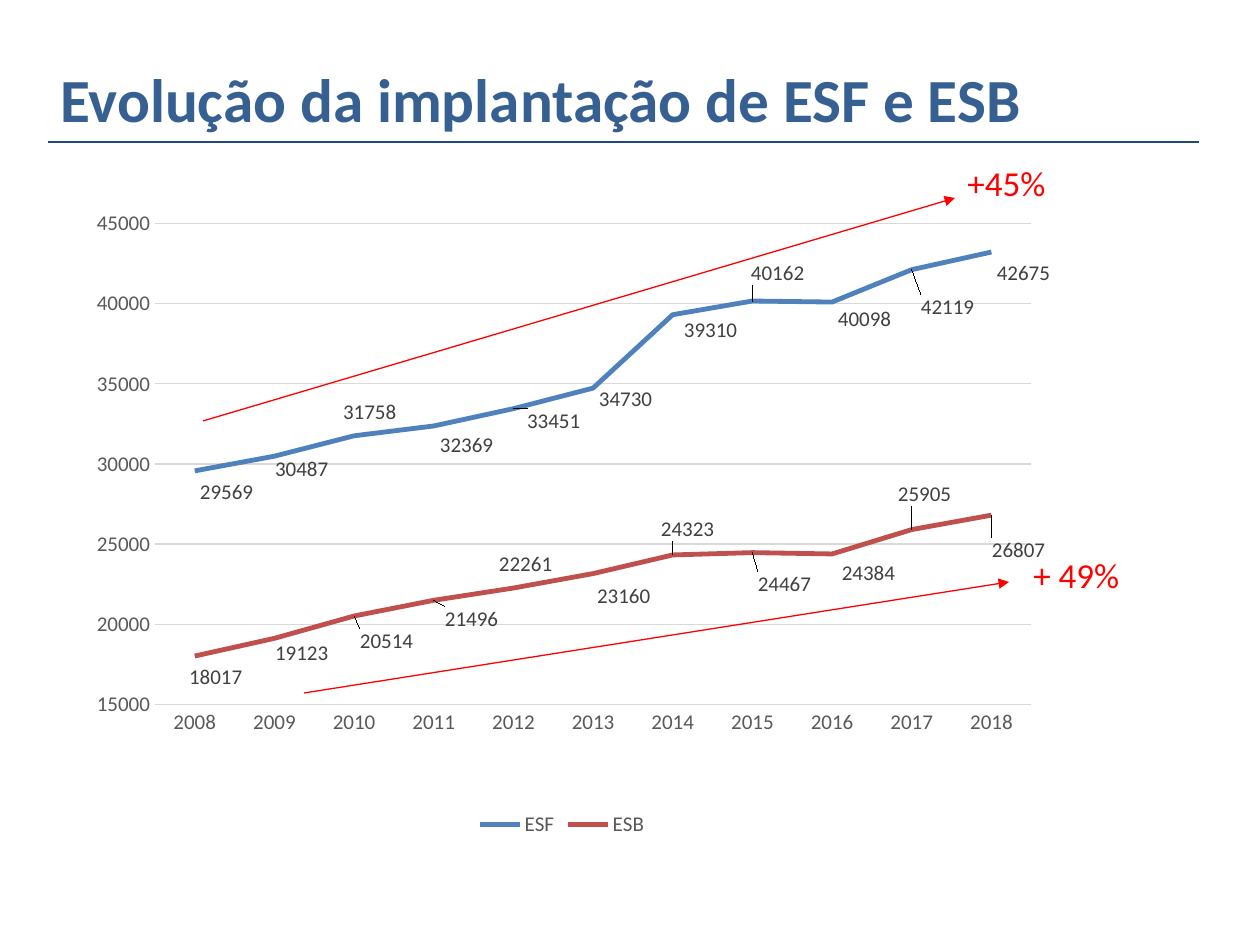
"""Build the slide on the growth of ESF and ESB teams, 2008 to 2018."""
from lxml import etree
from pptx import Presentation
from pptx import util as u
from pptx.chart import data
from pptx.dml.color import RGBColor
from pptx.enum import chart as ch, shapes, text
from pptx.oxml import parse_xml
from pptx.oxml.ns import nsdecls, qn

THEME = {
    "font": "Calibri", "title": "376092", "rule": "1F497D", "growth": "FF0000",
    "axis": "595959", "grid": "D9D9D9", "label": "404040",
    "title_size": 35, "growth_size": 20, "chart_size": 12,
}
SLIDE = (1260, 945)
TITLE = ("Evolução da implantação de ESF e ESB", (48, 40, 1134, 116))
RULE = ((48, 142), (1199, 142))
YEARS = [str(year) for year in range(2008, 2019)]
SERIES = [
    {"name": "ESF", "color": "4F81BD",
     "values": [29569, 30487, 31758, 32369, 33451, 34730, 39310, 40162, 40098, 42119, 43217],
     "label_centres": [(226, 492), (301, 469), (369, 412), (466, 445), (553, 421), (625, 399),
                       (710, 330), (777, 273), (864, 319), (947, 307), (1023, 273)],
     "custom": {10: "42675"}},
    {"name": "ESB", "color": "C0504D",
     "values": [18017, 19123, 20514, 21496, 22261, 23160, 24323, 24467, 24384, 25905, 26807],
     "label_centres": [(215, 677), (301, 653), (386, 641), (471, 619), (525, 564), (623, 596),
                       (687, 529), (784, 584), (868, 573), (924, 494), (1018, 550)],
     "custom": {}},
]
GROWTH = [
    ("+45%", (955, 155, 117, 69), (203, 421), (955, 198)),
    ("+ 49%", (1021, 547, 127, 69), (304, 693), (1009, 582)),
]
CHART = (68, 209, 988, 633)
PLOT = (0.088, 0.023, 0.887, 0.76)
AXIS_MIN, AXIS_MAX, AXIS_STEP = 15000, 45000, 5000
LABEL_REACH = 31


def px(length):
    return u.Emu(round(length * 914400 / 126))


def color(name):
    return RGBColor.from_string(THEME.get(name, name))


def style_font(font, size, tone, bold=False):
    font.name, font.size, font.bold = THEME["font"], u.Pt(THEME[size]), bold
    font.color.rgb = color(tone)


def style_line(line, tone, width):
    line.color.rgb = color(tone)
    line.width = u.Pt(width)


def add_text(slide, words, box, *, size, tone, bold=False, wrap=True,
             anchor=text.MSO_ANCHOR.TOP):
    frame = slide.shapes.add_textbox(*map(px, box)).text_frame
    frame.word_wrap, frame.vertical_anchor = wrap, anchor
    run = frame.paragraphs[0].add_run()
    run.text = words
    style_font(run.font, size, tone, bold)


def add_line(slide, start, end, *, tone, width, arrow=False):
    line = slide.shapes.add_connector(shapes.MSO_CONNECTOR.STRAIGHT, *map(px, start + end))
    style_line(line.line, tone, width)
    if arrow:
        etree.SubElement(line.line._get_or_add_ln(), qn("a:tailEnd"), type="triangle")
    etree.SubElement(line._element.spPr, qn("a:effectLst"))


def manual_layout(**parts):
    fields = "".join(f'<c:{key} val="{value}"/>' for key, value in parts.items())
    return parse_xml(f'<c:layout {nsdecls("c")}><c:manualLayout>{fields}'
                     '</c:manualLayout></c:layout>')


def point_place(index, value):
    left, top, width, height = CHART
    x = left + width * (PLOT[0] + PLOT[2] * (index + 0.5) / len(YEARS))
    share = (AXIS_MAX - value) / (AXIS_MAX - AXIS_MIN)
    return x, top + height * (PLOT[1] + PLOT[3] * share)


def label_point(series, index, value, centre, custom):
    label = series.points[index].data_label
    if custom:
        run = label.text_frame.paragraphs[0].add_run()
        run.text = custom
        style_font(run.font, "chart_size", "label")
    else:
        style_font(label.font, "chart_size", "label")
    label.position = ch.XL_LABEL_POSITION.RIGHT
    x, y = point_place(index, value)
    shift = manual_layout(x=round((centre[0] - x - LABEL_REACH) / CHART[2], 4),
                          y=round((centre[1] - y) / CHART[3], 4))
    label._dLbl.find(qn("c:idx")).addnext(shift)


def style_axes(chart):
    for axis in (chart.category_axis, chart.value_axis):
        axis.major_tick_mark = axis.minor_tick_mark = ch.XL_TICK_MARK.NONE
        style_font(axis.tick_labels.font, "chart_size", "axis")
    style_line(chart.category_axis.format.line, "grid", 1)
    values = chart.value_axis
    values.minimum_scale, values.maximum_scale = AXIS_MIN, AXIS_MAX
    values.major_unit = AXIS_STEP
    values.format.line.fill.background()
    style_line(values.major_gridlines.format.line, "grid", 0.75)


def add_growth_chart(slide):
    figures = data.CategoryChartData(number_format="General")
    figures.categories = YEARS
    for team in SERIES:
        figures.add_series(team["name"], team["values"])
    chart = slide.shapes.add_chart(ch.XL_CHART_TYPE.LINE, *map(px, CHART), figures).chart
    chart.has_title = False
    style_font(chart.font, "chart_size", "axis")
    style_axes(chart)
    chart.has_legend = True
    chart.legend.position = ch.XL_LEGEND_POSITION.BOTTOM
    chart.legend.include_in_layout = False
    style_font(chart.legend.font, "chart_size", "axis")
    plot_area = chart._chartSpace.chart.plotArea
    for layout in plot_area.findall(qn("c:layout")):
        plot_area.remove(layout)
    plot_area.insert(0, manual_layout(layoutTarget="inner", xMode="edge", yMode="edge",
                                      **dict(zip("xywh", PLOT))))
    for team, series in zip(SERIES, chart.plots[0].series):
        series.smooth = False
        series.marker.style = ch.XL_MARKER_STYLE.NONE
        style_line(series.format.line, team["color"], 2.75)
        series.data_labels.show_value = True
        style_font(series.data_labels.font, "chart_size", "label")
        for index, (value, centre) in enumerate(zip(team["values"], team["label_centres"])):
            label_point(series, index, value, centre, team["custom"].get(index))


def main():
    deck = Presentation()
    deck.slide_width, deck.slide_height = map(px, SLIDE)
    slide = deck.slides.add_slide(deck.slide_layouts[6])
    add_text(slide, *TITLE, size="title_size", tone="title", bold=True,
             anchor=text.MSO_ANCHOR.MIDDLE)
    add_growth_chart(slide)
    for words, box, start, end in GROWTH:
        add_line(slide, start, end, tone="growth", width=0.75, arrow=True)
        add_text(slide, words, box, size="growth_size", tone="growth", wrap=False)
    add_line(slide, *RULE, tone="rule", width=1)
    deck.save("out.pptx")


if __name__ == "__main__":
    main()
